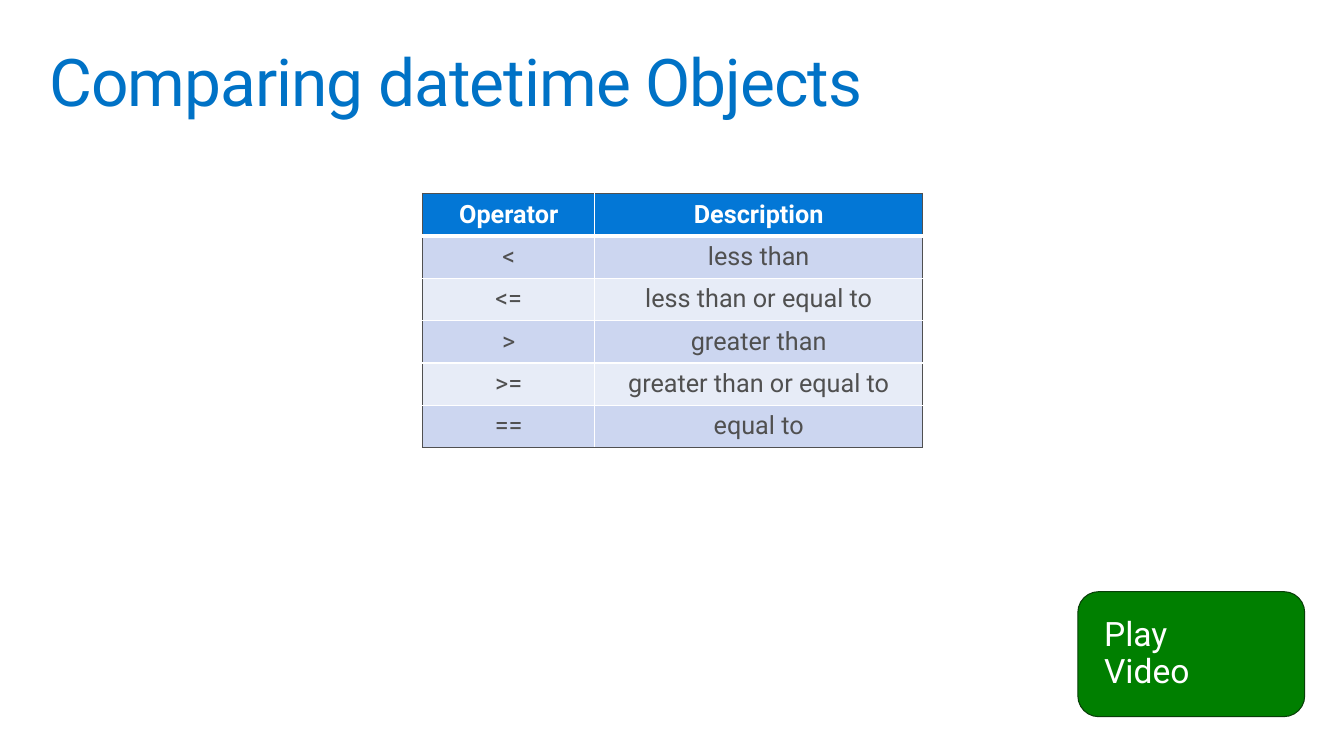
import pptx
import pptx.util
import pptx.dml.color
import pptx.enum.shapes
import pptx.enum.text
import lxml.etree
import pptx.oxml.ns

Inches, Pt = pptx.util.Inches, pptx.util.Pt
RGBColor = pptx.dml.color.RGBColor
MIDDLE = pptx.enum.text.MSO_ANCHOR.MIDDLE
CENTER = pptx.enum.text.PP_ALIGN.CENTER
LEFT = pptx.enum.text.PP_ALIGN.LEFT
qn = pptx.oxml.ns.qn

TITLE = "Comparing datetime Objects"
BUTTON = "Play\vVideo"
ROWS = [
    ("Operator", "Description"),
    ("<", "less than"),
    ("<=", "less than or equal to"),
    (">", "greater than"),
    (">=", "greater than or equal to"),
    ("==", "equal to"),
]
COL_WIDTHS = (1.71, 3.25)
ROW_HEIGHT = 0.42

FONT = "Roboto"
WHITE = RGBColor(0xFF, 0xFF, 0xFF)
GRAY = RGBColor(0x50, 0x50, 0x50)
TITLE_BLUE = RGBColor(0x00, 0x72, 0xC6)
HEADER_BLUE = RGBColor(0x03, 0x77, 0xD6)
BANDS = (RGBColor(0xE7, 0xEC, 0xF7), RGBColor(0xCC, 0xD6, 0xF0))
GREEN = RGBColor(0x00, 0x7F, 0x00)
DARK_GREEN = RGBColor(0x08, 0x3E, 0x08)


def set_text(tf, text, size, color, align=LEFT, bold=False, spacing=None):
    tf.text = text
    p = tf.paragraphs[0]
    p.alignment = align
    if spacing:
        p.line_spacing = spacing
    for r in p.runs:
        r.font.name = FONT
        r.font.size = Pt(size)
        r.font.bold = bold
        r.font.color.rgb = color


def set_margins(box, x, y):
    box.margin_left = box.margin_right = Inches(x)
    box.margin_top = box.margin_bottom = Inches(y)


def set_border(cell, side, color, width):
    tcPr = cell._tc.get_or_add_tcPr()
    ln = lxml.etree.SubElement(tcPr, qn("a:ln" + side), w=str(Pt(width)))
    fill = lxml.etree.SubElement(ln, qn("a:solidFill"))
    lxml.etree.SubElement(fill, qn("a:srgbClr"), val=str(color))


prs = pptx.Presentation()
prs.slide_width, prs.slide_height = Inches(13.33), Inches(7.5)
s = prs.slides.add_slide(prs.slide_layouts[6])

sp = s.shapes.add_textbox(Inches(0.39), Inches(0.39), Inches(12.55), Inches(0.98))
tf = sp.text_frame
tf.word_wrap = True
set_margins(tf, 0.1, 0.1)
set_text(tf, TITLE, 47, TITLE_BLUE, spacing=0.9)
tf.paragraphs[0].runs[0].font._element.set("spc", "-70")

sp = s.shapes.add_shape(pptx.enum.shapes.MSO_SHAPE.ROUNDED_RECTANGLE,
                        Inches(10.69), Inches(5.87), Inches(2.25), Inches(1.24))
sp.shadow.inherit = False
sp.fill.solid()
sp.fill.fore_color.rgb = GREEN
sp.line.color.rgb = DARK_GREEN
sp.line.width = Pt(0.75)
tf = sp.text_frame
tf.word_wrap = True
tf.vertical_anchor = MIDDLE
set_margins(tf, 0.2, 0.16)
set_text(tf, BUTTON, 24, WHITE, spacing=0.9)

last_row, last_col = len(ROWS) - 1, len(COL_WIDTHS) - 1
table = s.shapes.add_table(len(ROWS), len(COL_WIDTHS), Inches(4.19), Inches(1.92),
                           Inches(sum(COL_WIDTHS)),
                           Inches(ROW_HEIGHT * len(ROWS))).table
for col, width in zip(table.columns, COL_WIDTHS):
    col.width = Inches(width)
for i, row in enumerate(ROWS):
    table.rows[i].height = Inches(ROW_HEIGHT)
    header = i == 0
    for j, text in enumerate(row):
        cell = table.cell(i, j)
        set_border(cell, "L", GRAY if j == 0 else WHITE, 1)
        set_border(cell, "R", GRAY if j == last_col else WHITE, 1)
        set_border(cell, "T", GRAY if header else WHITE, 3 if i == 1 else 1)
        set_border(cell, "B", GRAY if i == last_row else WHITE, 3 if header else 1)
        cell.fill.solid()
        cell.fill.fore_color.rgb = HEADER_BLUE if header else BANDS[i % 2]
        cell.vertical_anchor = MIDDLE
        set_margins(cell, 0.3, 0.06)
        set_text(cell.text_frame, text, 18, WHITE if header else GRAY, CENTER, header)

prs.save("out.pptx")
